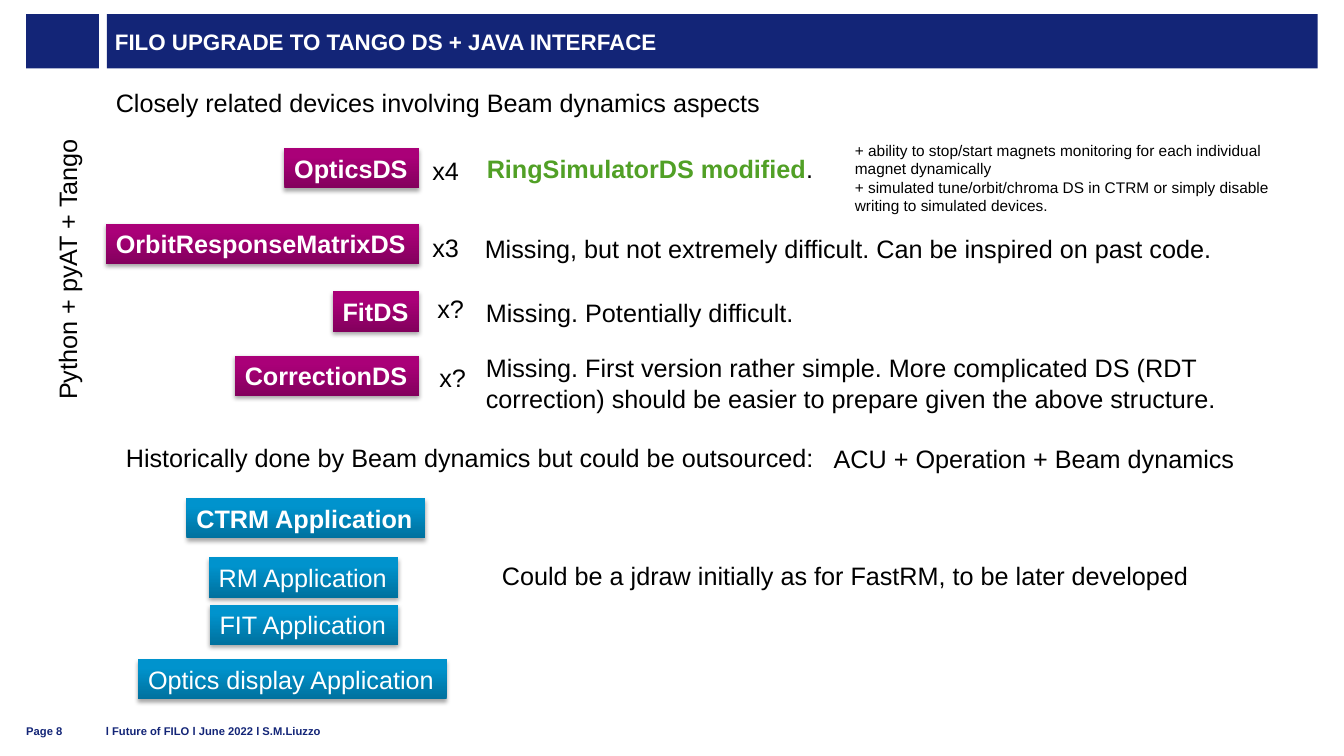
from lxml import etree
from pptx import Presentation
from pptx import util as u
from pptx.dml.color import RGBColor
from pptx.enum import shapes, text
from pptx.oxml.ns import qn

PX = 9144
NAVY, WHITE, BLACK, GREEN = "132577", "FFFFFF", "000000", "51A026"
PURPLE = ("83005D", "AA0078")
BLUE = ("00719E", "0093CD")


def colour(value):
    return RGBColor.from_string(value)


def px(*values):
    return [u.Emu(value * PX) for value in values]


class Board:
    """Hold the style and the current slide, and draw each kind of element."""

    font = "Arial"

    def __init__(self, deck):
        self.slide = deck.slides.add_slide(deck.slide_layouts[6])

    def style(self, frame, size, tint, bold):
        for paragraph in frame.paragraphs:
            for run in paragraph.runs:
                run.font.name = self.font
                run.font.size = u.Pt(size)
                run.font.bold = bold
                run.font.color.rgb = colour(tint)

    def block(self, left, top, width, height):
        shape = self.slide.shapes.add_shape(
            shapes.MSO_SHAPE.RECTANGLE, *px(left, top, width, height))
        shape.line.fill.background()
        shape.shadow.inherit = False
        return shape

    def bar(self, left, top, width, height, words=""):
        bar = self.block(left, top, width, height)
        bar.fill.solid()
        bar.fill.fore_color.rgb = colour(NAVY)
        frame = bar.text_frame
        frame.margin_left, frame.margin_right, frame.margin_top, frame.margin_bottom = px(8, 8, 0, 0)
        frame.vertical_anchor = text.MSO_ANCHOR.MIDDLE
        frame.text = words
        frame.paragraphs[0].alignment = text.PP_ALIGN.LEFT
        self.style(frame, 16, WHITE, True)

    def badge(self, words, left, top, width, shades, bold=True):
        badge = self.block(left, top, width, 40)
        badge.fill.gradient()
        badge.fill.gradient_angle = 90
        for stop, shade, position in zip(badge.fill.gradient_stops, shades, (0, 0.8)):
            stop.color.rgb = colour(shade)
            stop.position = position
        effects = badge.element.spPr.find(qn("a:effectLst"))
        shadow = etree.SubElement(effects, qn("a:outerShdw"), blurRad="40000",
                                  dist="23000", dir="5400000", rotWithShape="0")
        black = etree.SubElement(shadow, qn("a:srgbClr"), val=BLACK)
        etree.SubElement(black, qn("a:alpha"), val="35000")
        frame = badge.text_frame
        frame.word_wrap = False
        frame.vertical_anchor = text.MSO_ANCHOR.TOP
        frame.text = words
        frame.paragraphs[0].alignment = text.PP_ALIGN.LEFT
        self.style(frame, 18, WHITE, bold)

    def note(self, words, left, top, width, height=40, size=18, wrap=False):
        note = self.slide.shapes.add_textbox(*px(left, top, width, height))
        frame = note.text_frame
        frame.word_wrap = wrap
        frame.auto_size = text.MSO_AUTO_SIZE.SHAPE_TO_FIT_TEXT
        frame.text = words
        self.style(frame, size, BLACK, False)
        return note

    def footer(self, words, left, width):
        footer = self.slide.shapes.add_textbox(*px(left, 709, width, 23))
        frame = footer.text_frame
        frame.margin_left = frame.margin_right = frame.margin_top = frame.margin_bottom = 0
        frame.vertical_anchor = text.MSO_ANCHOR.BOTTOM
        frame.word_wrap = True
        frame.text = words
        self.style(frame, 8, NAVY, True)


def main():
    deck = Presentation()
    deck.slide_width, deck.slide_height = px(1333, 750)
    board = Board(deck)

    board.bar(26, 14, 72, 54)
    board.bar(106, 14, 1201, 54, "FILO UPGRADE TO TANGO DS + JAVA INTERFACE")
    board.footer("Page 8", 26, 60)
    board.footer("l Future of FILO l June 2022 l S.M.Liuzzo", 105, 892)

    devices_right = 416
    for device, top, width in (
        ("OpticsDS", 147, 134),
        ("OrbitResponseMatrixDS", 222, 311),
        ("FitDS", 289, 86),
        ("CorrectionDS", 353, 183),
    ):
        board.badge(device, devices_right - width, top, width, PURPLE)

    for application, left, top, width, bold in (
        ("CTRM Application", 185, 494, 237, True),
        ("RM Application", 207, 553, 188, False),
        ("FIT Application", 208, 600, 187, False),
        ("Optics display Application", 137, 654, 306, False),
    ):
        board.badge(application, left, top, width, BLUE, bold)

    for count, left, top in (("x4", 419, 149), ("x3", 419, 226), ("x?", 424, 286), ("x?", 426, 355)):
        board.note(count, left, top, 47)

    for words, left, top, width in (
        ("Closely related devices involving Beam dynamics aspects", 105, 82, 665),
        ("Historically done by Beam dynamics but could be outsourced:", 115, 434, 709),
        ("ACU + Operation + Beam dynamics", 817, 435, 421),
        ("Could be a jdraw initially as for FastRM, to be later developed", 488, 551, 707),
        ("Missing, but not extremely difficult. Can be inspired on past code.", 471, 227, 755),
        ("Missing. Potentially difficult.", 472, 290, 328),
    ):
        board.note(words, left, top, width)

    board.note("Missing. First version rather simple. More complicated DS (RDT correction) "
               "should be easier to prepare given the above structure.",
               472, 345, 745, 71, wrap=True)
    board.note("+ ability to stop/start magnets monitoring for each individual magnet dynamically\n"
               "+ simulated tune/orbit/chroma DS in CTRM or simply disable writing to simulated devices.",
               838, 135, 469, 84, size=11, wrap=True)

    simulator = board.note("RingSimulatorDS modified", 473, 147, 354)
    sentence = simulator.text_frame.paragraphs[0]
    sentence.add_run().text = "."
    board.style(simulator.text_frame, 18, BLACK, False)
    sentence.runs[0].font.bold = True
    sentence.runs[0].font.color.rgb = colour(GREEN)

    languages = board.note("Python + pyAT + Tango", -74, 246, 281)
    languages.rotation = 270

    deck.save("out.pptx")


if __name__ == "__main__":
    main()
